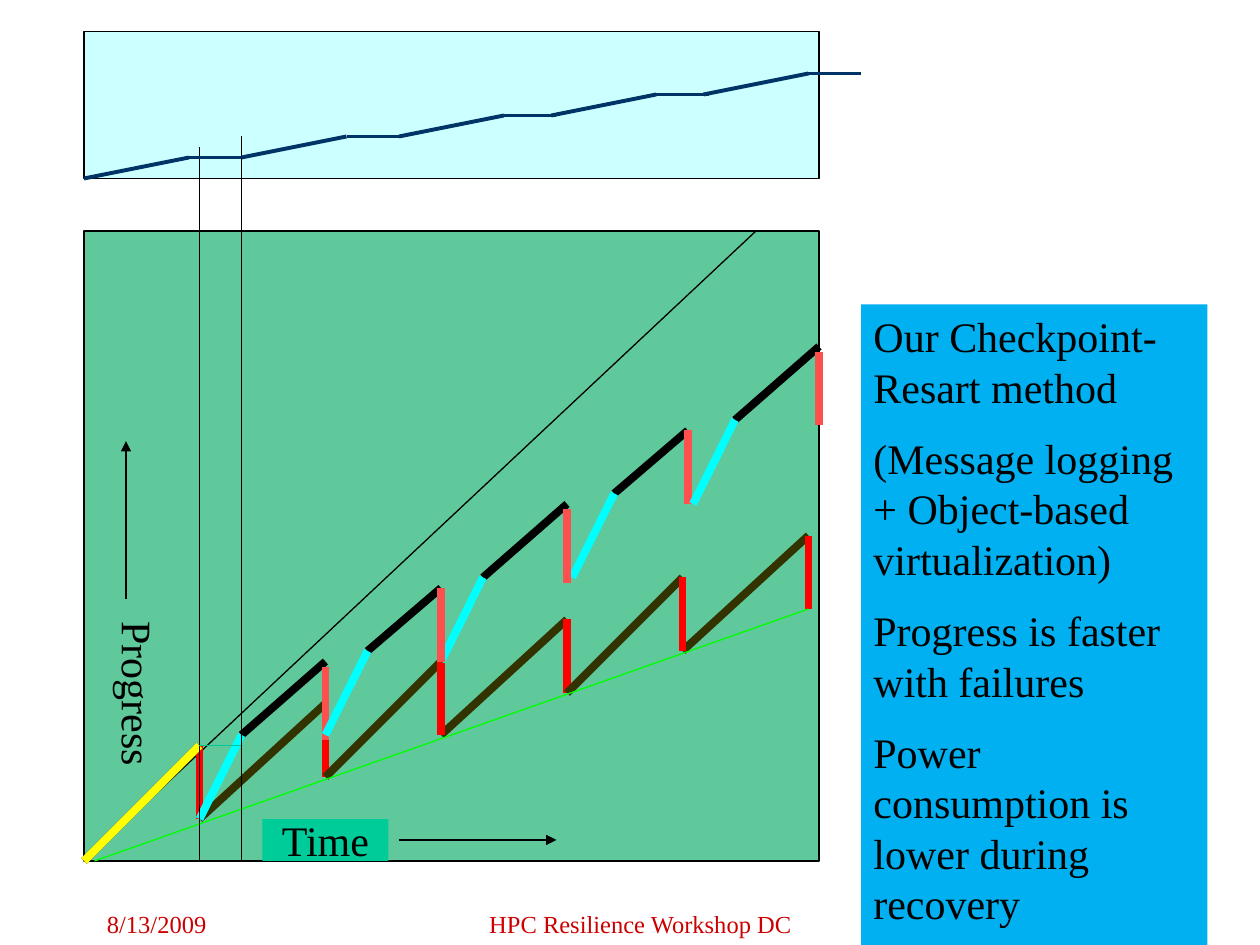
from itertools import pairwise

from lxml.etree import SubElement
from pptx import Presentation
from pptx.dml.color import RGBColor
from pptx.enum.shapes import MSO_CONNECTOR, MSO_SHAPE
from pptx.enum.text import MSO_ANCHOR, MSO_AUTO_SIZE, PP_ALIGN
from pptx.oxml.ns import qn
from pptx.util import Inches, Pt

COLS, ROWS = 120, 90  # grid of twelfths of an inch
BLACK, RED, GREEN, YELLOW = "000000", "FF0000", "00FF00", "FFFF00"
OLIVE, CYAN, CORAL, NAVY = "333300", "00FFFF", "FF5050", "003366"
THIN, ARROW, MEDIUM, THICK = 0.75, 1.5, 2.25, 4.5


def rgb(color):
    return RGBColor.from_string(color)


class Deck:
    """Holds the style and the current slide; lengths are grid units."""

    font = "Times New Roman"

    def __init__(self):
        self.prs = Presentation()
        self.prs.slide_width, self.prs.slide_height = Inches(10), Inches(7.5)
        self.s = self.prs.slides.add_slide(self.prs.slide_layouts[6])

    def x(self, col):
        return int(self.prs.slide_width * col / COLS)

    def y(self, row):
        return int(self.prs.slide_height * row / ROWS)

    def box(self, left, top, width, height):
        return self.x(left), self.y(top), self.x(width), self.y(height)

    def rect(self, at, fill, line=None):
        sp = self.s.shapes.add_shape(MSO_SHAPE.RECTANGLE, *self.box(*at))
        sp.shadow.inherit = False
        sp.fill.solid()
        sp.fill.fore_color.rgb = rgb(fill)
        if line:
            sp.line.color.rgb = rgb(line)
            sp.line.width = Pt(THIN)
        else:
            sp.line.fill.background()
        return sp

    def line(self, start, end, color=BLACK, width=THIN, arrow=False):
        cn = self.s.shapes.add_connector(
            MSO_CONNECTOR.STRAIGHT, self.x(start[0]), self.y(start[1]),
            self.x(end[0]), self.y(end[1]))
        cn.line.color.rgb = rgb(color)
        cn.line.width = Pt(width)
        properties = cn.element.spPr
        if arrow:
            SubElement(properties.find(qn("a:ln")), qn("a:tailEnd"), type="triangle")
        SubElement(properties, qn("a:effectLst"))

    def polyline(self, points, color, width):
        for start, end in pairwise(points):
            self.line(start, end, color, width)

    def set_text(self, sp, paragraphs, size=24, color=BLACK, align=PP_ALIGN.LEFT,
                 anchor=MSO_ANCHOR.TOP, wrap=True, before=0, grow=False):
        tf = sp.text_frame
        tf.word_wrap = wrap
        tf.vertical_anchor = anchor
        tf.text = "\n".join(paragraphs)
        if grow:
            tf.auto_size = MSO_AUTO_SIZE.SHAPE_TO_FIT_TEXT
        for p in tf.paragraphs:
            p.alignment = align
            p.space_before = Pt(before)
            p.font.name = self.font
            p.font.size = Pt(size)
            p.font.color.rgb = rgb(color)

    def text(self, at, paragraph, **style):
        sp = self.s.shapes.add_textbox(*self.box(*at))
        self.set_text(sp, [paragraph], **style)
        return sp


def plain_restart(deck):
    """Progress that falls back seven rows at each failure."""
    failures = [(col, 71 - 4 * i) for i, col in enumerate((19, 31, 42, 54, 65, 77))]
    start = (8, 82)
    for pair in zip(failures[::2], failures[1::2]):
        drops = []
        for col, row in pair:
            deck.line(start, (col, row), OLIVE, THICK)
            start = (col, row + 7)
            drops.append((start, (col, row)))
        for low, peak in drops:
            deck.line(low, peak, RED, THICK)


def fast_restart(deck):
    """Quick recovery, normal run, then the next failure."""
    # start column, start row, run width, run height, gap above the drop
    for col, row, width, height, gap in (
            (54.5, 55, 7, 6, 0), (19, 78, 8, 7, 0.5), (42, 63, 8, 7, 0.5),
            (31, 70, 7, 6, 0), (66, 48, 8, 7, 0.5)):
        recovered = (col + 4, row - 8)
        end_col, end_row = recovered[0] + width, recovered[1] - height
        deck.line(recovered, (end_col, end_row), BLACK, THICK)
        deck.line((end_col, end_row + gap + 7), (end_col, end_row + gap), CORAL, THICK)
        deck.line((col, row), recovered, CYAN, THICK)


def power_curve(deck):
    for i, col in enumerate((8, 23, 38, 52.5, 67)):
        row = 17 - 2 * i
        deck.polyline([(col, row), (col + 10, row - 2), (col + 15, row - 2)], NAVY, MEDIUM)


def main():
    deck = Deck()
    deck.rect((8, 22, 70, 60), "60C99C", BLACK)
    deck.line((8, 82), (72, 22))
    plain_restart(deck)
    deck.line((9, 82), (77, 58), GREEN)
    deck.rect((8, 3, 70, 14), "CCFFFF", BLACK)
    deck.line((8, 82), (19, 71), YELLOW, THICK)
    fast_restart(deck)
    for col, top in ((19, 14), (23, 13)):
        deck.line((col, 82), (col, top))
    power_curve(deck)

    deck.set_text(deck.rect((82, 29, 33, 61), "00B0F0"), [
        "Our Checkpoint-Resart method",
        "(Message logging + Object-based virtualization)",
        "Progress is faster with failures",
        "Power consumption is lower during recovery"], before=12, grow=True)
    deck.line((19, 71), (23, 71), "00C896")

    footer = {"size": 14, "color": "CC0000"}
    deck.text((9, 86, 25, 4), "8/13/2009", **footer)
    deck.text((39, 86, 44, 4), "HPC Resilience Workshop DC", align=PP_ALIGN.CENTER, **footer)

    deck.set_text(deck.rect((25, 78, 12, 4), "00CC99"), ["Time"],
                  align=PP_ALIGN.CENTER, anchor=MSO_ANCHOR.MIDDLE, wrap=False)
    deck.line((38, 80), (53, 80), width=ARROW, arrow=True)
    progress = deck.text((9, 58, 7.2, 17), "Progress", before=12, grow=True)
    progress.element.txBody.find(qn("a:bodyPr")).set("vert", "eaVert")
    deck.line((12, 57), (12, 42), arrow=True)
    deck.prs.save("out.pptx")


if __name__ == "__main__":
    main()
